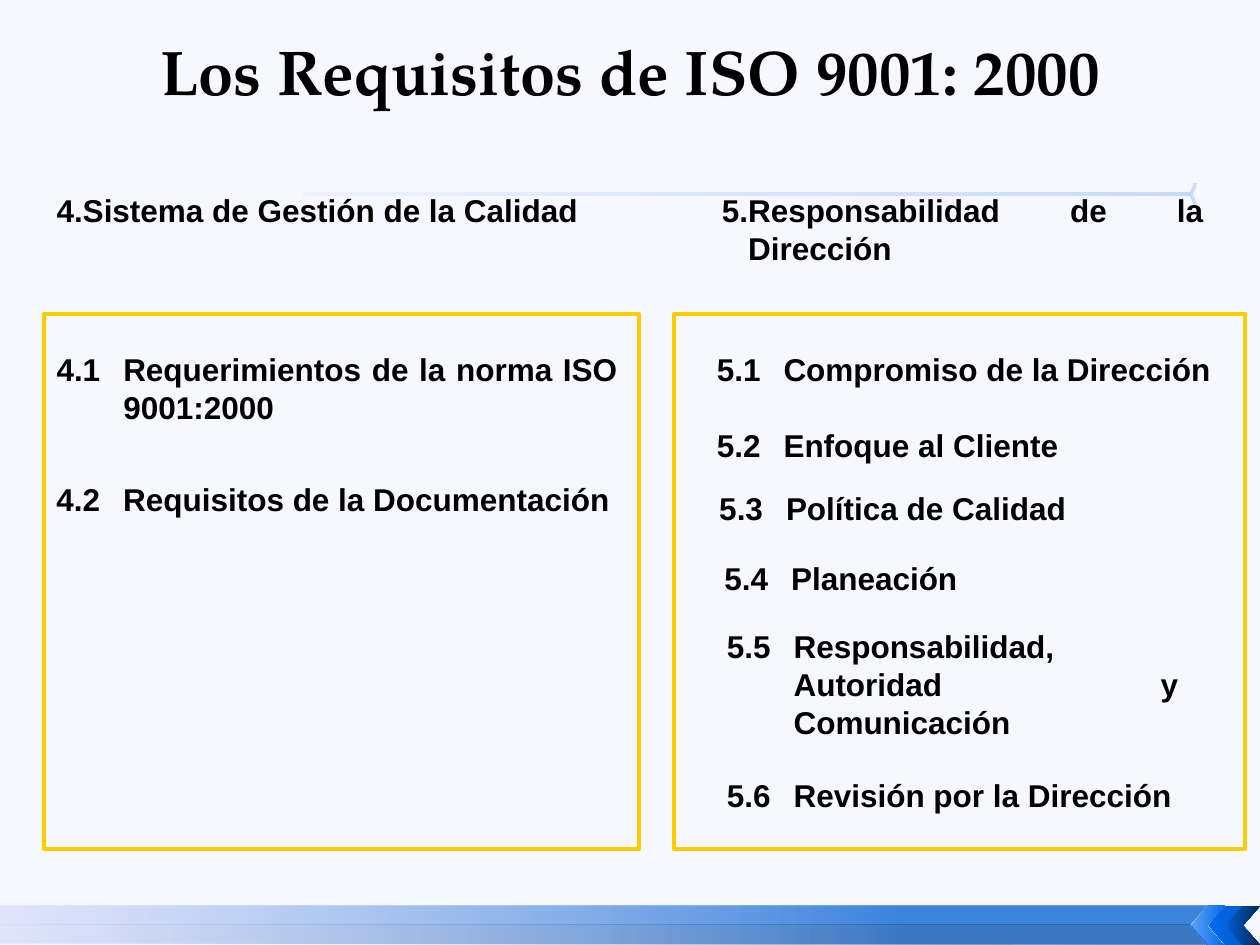
from lxml import etree
from pptx import Presentation
from pptx.dml.color import RGBColor
from pptx.enum.shapes import MSO_SHAPE
from pptx.enum.text import MSO_ANCHOR, PP_ALIGN
from pptx.oxml.ns import qn
from pptx.util import Inches, Pt

RECT, CHEVRON = MSO_SHAPE.RECTANGLE, MSO_SHAPE.CHEVRON
LEFT, CENTER, JUSTIFY = PP_ALIGN.LEFT, PP_ALIGN.CENTER, PP_ALIGN.JUSTIFY
TOP, MIDDLE = MSO_ANCHOR.TOP, MSO_ANCHOR.MIDDLE

HEADS = [
    ("4.Sistema de Gestión de la Calidad", 0.35, 1.47, 4.41, 0.4, LEFT),
    ("5.Responsabilidad de la Dirección", 5.63, 1.47, 4.02, 0.7, JUSTIFY),
]
ITEMS = [
    ("4.1\tRequerimientos de la norma ISO 9001:2000", 0.35, 2.73, 4.65, 0.71, JUSTIFY),
    ("4.2\tRequisitos de la Documentación", 0.35, 3.76, 4.8, 0.46, LEFT),
    ("5.1\tCompromiso de la Dirección", 5.59, 2.73, 4.21, 0.4, LEFT),
    ("5.2\tEnfoque al Cliente", 5.59, 3.33, 3.05, 0.4, JUSTIFY),
    ("5.3\tPolítica de Calidad", 5.61, 3.83, 3.05, 0.4, JUSTIFY),
    ("5.4\tPlaneación", 5.65, 4.39, 3.05, 0.4, JUSTIFY),
    ("5.5\tResponsabilidad, Autoridad y Comunicación", 5.67, 4.93, 3.78, 1, JUSTIFY),
    ("5.6\tRevisión por la Dirección", 5.67, 6.11, 4.06, 0.4, JUSTIFY),
]


def color(text):
    return RGBColor.from_string(text)


def blend(shape, stops):
    shape.shadow.inherit = False
    shape.line.fill.background()
    shape.fill.gradient()
    shape.fill.gradient_angle = 180
    for stop, (place, tone, alpha) in zip(shape.fill.gradient_stops, stops):
        stop.position = place / 100
        stop.color.rgb = color(tone)
    tones = shape._element.spPr.iter(qn("a:srgbClr"))
    for node, (place, tone, alpha) in zip(tones, stops):
        if alpha < 100:
            etree.SubElement(node, qn("a:alpha")).set("val", str(alpha * 1000))


def add_band(slide, points, tone):
    spots = [(Inches(x), Inches(y)) for x, y in points]
    build = slide.shapes.build_freeform(*spots[0])
    build.add_line_segments(spots[1:], close=True)
    blend(build.convert_to_shape(), [(25, tone, 75), (100, "CCD4F8", 50)])


def add_shape(slide, kind, box):
    return slide.shapes.add_shape(kind, *map(Inches, box))


def add_arrow(slide, box, first, last):
    shape = add_shape(slide, CHEVRON, box)
    shape._element.spPr.find(qn("a:xfrm")).set("flipH", "1")
    blend(shape, [(0, *first), (100, *last)])


def add_frame(slide, box):
    shape = add_shape(slide, RECT, box)
    shape.shadow.inherit = False
    shape.fill.background()
    shape.line.color.rgb = color("FFCC00")
    shape.line.width = Pt(2.25)


def add_text(slide, text, box, align, size=18, face="Arial", anchor=TOP, hang=0):
    frame = slide.shapes.add_textbox(*map(Inches, box)).text_frame
    frame.word_wrap = True
    frame.vertical_anchor = anchor
    para = frame.paragraphs[0]
    para.text = text
    para.alignment = align
    if hang:
        props = para._p.get_or_add_pPr()
        props.set("marL", str(Inches(hang)))
        props.set("indent", str(-Inches(hang)))
        tabs = etree.SubElement(props, qn("a:tabLst"))
        tab = etree.SubElement(tabs, qn("a:tab"))
        tab.set("pos", str(Inches(hang)))
        tab.set("algn", "l")
    font = para.font
    font.name, font.size, font.bold = face, Pt(size), True
    font.color.rgb = color("000000")


def add_decor(slide):
    add_band(slide, [(9.58, 7.5), (0, 7.49), (0, 7.34), (9.44, 7.34)], "004EAF")
    add_band(slide, [(9.58, 7.19), (0, 7.19), (0, 7.34), (9.44, 7.34)], "005ED1")
    tones = [("006AED", 60), ("006AED", 100), ("005ED1", 100), ("002757", 100)]
    for i, pair in enumerate(zip(tones, tones[1:])):
        add_arrow(slide, (9.45 + 0.14 * i, 7.19, 0.27, 0.31), *pair)
    add_arrow(slide, (9.44, 1.46, 0.06, 0.16), ("006AED", 20), ("006AED", 15))
    rule = add_shape(slide, RECT, (2.41, 1.53, 7.03, 0.02))
    blend(rule, [(0, "006AED", 20), (100, "006AED", 4)])


def main():
    deck = Presentation()
    deck.slide_width, deck.slide_height = Inches(10), Inches(7.5)
    slide = deck.slides.add_slide(deck.slide_layouts[6])
    slide.background.fill.solid()
    slide.background.fill.fore_color.rgb = color("F7F7FF")
    add_decor(slide)
    add_text(slide, "Los Requisitos de ISO 9001: 2000", (0.5, 0.21, 9, 0.69),
             CENTER, 36, "TeX Gyre Pagella", MIDDLE)
    for group, hang in ((HEADS, 0.21), (ITEMS, 0.53)):
        for text, *box, align in group:
            add_text(slide, text, box, align, hang=hang)
    for left, width in ((0.35, 4.72), (5.35, 4.53)):
        add_frame(slide, (left, 2.49, width, 4.25))
    deck.save("out.pptx")


if __name__ == "__main__":
    main()
